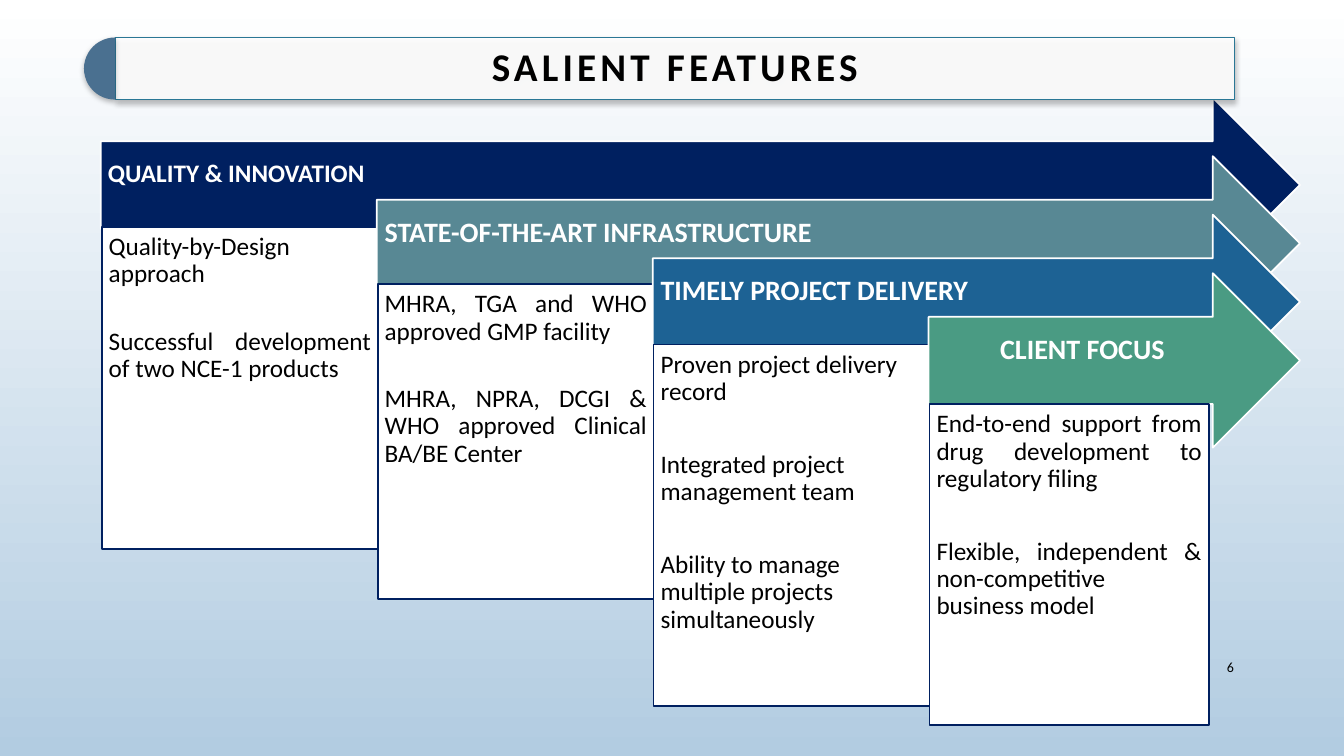
"""Build the salient features slide with four stepped arrows."""
from lxml.etree import SubElement
from pptx import Presentation
from pptx.dml.color import RGBColor
from pptx.enum.shapes import MSO_SHAPE as Shape
from pptx.enum.text import MSO_ANCHOR as Anchor, PP_ALIGN as Align
from pptx.oxml.ns import qn
from pptx.util import Pt

WHITE = RGBColor(0xFF, 0xFF, 0xFF)
BLACK = RGBColor(0x00, 0x00, 0x00)
SKY = RGBColor(0xB2, 0xCC, 0xE1)
NAVY = RGBColor(0x00, 0x20, 0x60)
SLATE = RGBColor(0x58, 0x88, 0x94)
BLUE = RGBColor(0x1D, 0x62, 0x94)
GREEN = RGBColor(0x4A, 0x9B, 0x83)
TEAL = RGBColor(0x2A, 0x77, 0x95)
STEEL = RGBColor(0x4A, 0x70, 0x90)

ARROW_LEFT, ARROW_TOP, ARROW_TIP, ARROW_HEIGHT = 72, 69.8, 928.6, 124.6
STEP_X, STEP_Y = 197.1, 41.8

FEATURES = [
    dict(title="QUALITY & INNOVATION", color=NAVY, size=18, title_align=Align.LEFT,
         body=(162, 197.3, 230.4), align=Align.JUSTIFY, gap=28.8,
         points=["Quality-by-Design approach",
                 "Successful development of two NCE-1 products"]),
    dict(title="STATE-OF-THE-ART INFRASTRUCTURE", color=SLATE, size=20, title_align=Align.LEFT,
         body=(203, 197.3, 224.9), align=Align.JUSTIFY, gap=28.8,
         points=["MHRA, TGA and WHO approved GMP facility",
                 "MHRA, NPRA, DCGI & WHO approved Clinical BA/BE Center"]),
    dict(title="TIMELY PROJECT DELIVERY", color=BLUE, size=20, title_align=Align.LEFT,
         body=(246.2, 197.3, 258.3), align=Align.LEFT, gap=32.6,
         points=["Proven project delivery record",
                 "Integrated project management team",
                 "Ability to manage multiple projects simultaneously"]),
    dict(title="CLIENT FOCUS", color=GREEN, size=20, title_align=Align.CENTER,
         body=(288.7, 199.4, 229), align=Align.JUSTIFY, gap=32.6,
         points=["End-to-end support from drug development to regulatory filing",
                 "Flexible, independent & non-competitive\nbusiness model"]),
]


class SlideBuilder:
    """Holds the text style and the current slide."""

    def __init__(self, slide, font="Calibri"):
        self.slide = slide
        self.font = font

    def background(self, top, bottom):
        """Fill the slide with a vertical gradient."""
        fill = self.slide.background.fill
        fill.gradient()
        fill.gradient_angle = 270
        for stop, color, position in zip(fill.gradient_stops, (top, bottom), (0, 1)):
            stop.color.rgb = color
            stop.position = position

    def shape(self, kind, box, fill, line=None, width=1.25):
        """Add a preset shape without a shadow."""
        shape = self.slide.shapes.add_shape(kind, *map(Pt, box))
        shape.shadow.inherit = False
        shape.fill.solid()
        shape.fill.fore_color.rgb = fill
        if line is None:
            shape.line.fill.background()
        else:
            shape.line.color.rgb = line
            shape.line.width = Pt(width)
        return shape

    def soft_shadow(self, shape):
        """Give a shape a soft shadow below it."""
        effects = shape.element.spPr.find(qn("a:effectLst"))
        shadow = SubElement(effects, qn("a:outerShdw"), blurRad=str(Pt(4)), dist=str(Pt(2)),
                            dir="5400000", algn="ctr", rotWithShape="0")
        color = SubElement(shadow, qn("a:srgbClr"), val=str(BLACK))
        SubElement(color, qn("a:alpha"), val="28000")

    def opacity(self, shape, percent):
        """Set how opaque the fill of a shape is."""
        color = shape.element.spPr.find(qn("a:solidFill")).find(qn("a:srgbClr"))
        SubElement(color, qn("a:alpha"), val=str(percent * 1000))

    def text(self, shape, paragraphs, size, color, align, anchor=Anchor.MIDDLE,
             insets=(7.2, 7.2, 7.2, 7.2), bold=False, gap=0, tracking=0):
        """Write paragraphs into a shape, run by run."""
        frame = shape.text_frame
        frame.word_wrap = True
        frame.vertical_anchor = anchor
        (frame.margin_left, frame.margin_top,
         frame.margin_right, frame.margin_bottom) = map(Pt, insets)
        for index, content in enumerate(paragraphs):
            paragraph = frame.add_paragraph() if index else frame.paragraphs[0]
            paragraph.alignment = align
            paragraph.line_spacing = 0.9
            if index:
                paragraph.space_before = Pt(gap)
            for number, line in enumerate(content.split("\n")):
                if number:
                    paragraph.add_line_break()
                run = paragraph.add_run()
                run.text = line
                run.font.name = self.font
                run.font.size = Pt(size)
                run.font.bold = bold
                run.font.color.rgb = color
                if tracking:
                    run.font._element.set("spc", str(tracking * 100))

    def feature(self, index, title, color, size, title_align, body, align, gap, points):
        """Add one arrow with the panel that hangs below it."""
        left = ARROW_LEFT + index * STEP_X
        arrow = self.shape(Shape.RIGHT_ARROW, (left, ARROW_TOP + index * STEP_Y,
                                               ARROW_TIP - left, ARROW_HEIGHT), color, WHITE)
        inset = size * 0.28
        self.text(arrow, [title], size, WHITE, title_align,
                  insets=(inset, inset, 20, 20), bold=True)
        top, width, height = body
        panel = self.shape(Shape.RECTANGLE, (left + 0.7, top, width, height), WHITE, NAVY)
        self.text(panel, points, 18, BLACK, align, Anchor.TOP, (5, 5, 5, 5), gap=gap)

    def title(self, content):
        """Add the title bar with its rounded end."""
        bar = self.shape(Shape.RECTANGLE, (82.3, 26.8, 799.7, 44.4), WHITE, TEAL, 0.75)
        self.opacity(bar, 90)
        self.soft_shadow(bar)
        self.text(bar, [content], 28, BLACK, Align.CENTER, bold=True, tracking=3)
        cap = self.shape(Shape.PIE, (60, 26.8, 44.4, 44.4), STEEL)
        cap.adjustments[0], cap.adjustments[1] = 54, 162
        self.soft_shadow(cap)

    def page_number(self, content):
        """Add the page number."""
        box = self.slide.shapes.add_textbox(Pt(828), Pt(463), Pt(60.5), Pt(28.8))
        self.text(box, [content], 10, BLACK, Align.RIGHT)


def main():
    """Create and save the presentation."""
    presentation = Presentation()
    presentation.slide_width, presentation.slide_height = Pt(960), Pt(540)
    builder = SlideBuilder(presentation.slides.add_slide(presentation.slide_layouts[6]))
    builder.background(WHITE, SKY)
    for index, feature in enumerate(FEATURES):
        builder.feature(index, **feature)
    builder.title("SALIENT FEATURES")
    builder.page_number("6")
    presentation.save("out.pptx")


if __name__ == "__main__":
    main()
